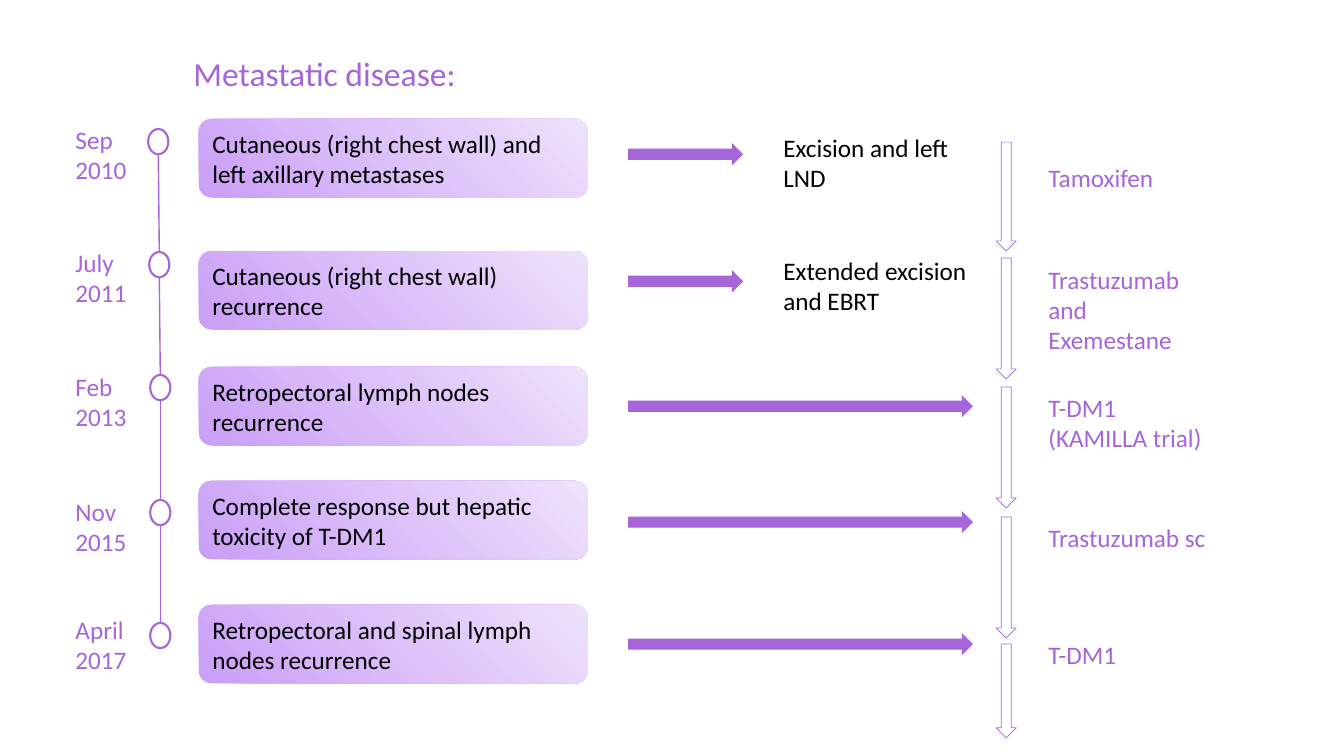
import pptx
import pptx.util
import pptx.dml.color
import pptx.enum.shapes
import pptx.enum.text
import pptx.oxml.ns
import lxml.etree

PURPLE, BLACK = "A665D8", "000000"
GRADIENT = ("CA9EF7", "EEE2FB")
TITLE = "Metastatic disease:"
SHORT, LONG = 1.14, 3.42

# date, date top, circle left, circle top
DATES = [
    ("Sep 2010", 1.18, 1.47, 1.28),
    ("July 2011", 2.4, 1.48, 2.5),
    ("Feb 2013", 3.63, 1.49, 3.72),
    ("Nov 2015", 4.87, 1.49, 4.96),
    ("April 2017", 6.04, 1.49, 6.18),
]
# event, box top, arrow top, arrow length
EVENTS = [
    ("Cutaneous (right chest wall) and left axillary metastases", 1.18, 1.42, SHORT),
    ("Cutaneous (right chest wall) recurrence", 2.49, 2.68, SHORT),
    ("Retropectoral lymph nodes recurrence", 3.64, 3.92, LONG),
    ("Complete response but hepatic toxicity of T-DM1", 4.77, 5.07, LONG),
    ("Retropectoral and spinal lymph nodes recurrence", 6, 6.28, LONG),
]
# procedure, top, width
PROCEDURES = [
    ("Excision and left LND", 1.26, 1.98),
    ("Extended excision and EBRT", 2.48, 2.19),
]
# drug, text top, text width, text height, arrow top, arrow height
DRUGS = [
    ("Tamoxifen", 1.56, 1.35, 0.4, 1.41, 1.08),
    ("Trastuzumab and Exemestane", 2.57, 1.74, 1.01, 2.56, 1.2),
    ("T-DM1 (KAMILLA trial)", 3.84, 1.74, 0.71, 3.84, 1.2),
    ("Trastuzumab sc", 5.13, 1.91, 0.4, 5.13, 1.2),
    ("T-DM1", 6.29, 1.91, 0.4, 6.39, 0.93),
]
CIRCLE_W, CIRCLE_H = 0.2, 0.25

prs = pptx.Presentation()
prs.slide_width = pptx.util.Inches(13.33)
prs.slide_height = pptx.util.Inches(7.5)
s = prs.slides.add_slide(prs.slide_layouts[6])
SHAPE = pptx.enum.shapes.MSO_SHAPE


def inches(*values):
    return [pptx.util.Inches(v) for v in values]


def rgb(color):
    return pptx.dml.color.RGBColor.from_string(color)


def write(sp, text, size=18, color=PURPLE, anchor="TOP"):
    tf = sp.text_frame
    tf.word_wrap = True
    tf.vertical_anchor = pptx.enum.text.MSO_ANCHOR[anchor]
    p = tf.paragraphs[0]
    p.alignment = pptx.enum.text.PP_ALIGN.LEFT
    r = p.add_run()
    r.text = text
    r.font.name = "Calibri"
    r.font.size = pptx.util.Pt(size)
    r.font.color.rgb = rgb(color)


def add_text(text, *box, **style):
    write(s.shapes.add_textbox(*inches(*box)), text, **style)


def add_shape(kind, *box, fill=None, line=None):
    sp = s.shapes.add_shape(kind, *inches(*box))
    sp.shadow.inherit = False
    if fill:
        sp.fill.solid()
        sp.fill.fore_color.rgb = rgb(fill)
    else:
        sp.fill.background()
    if line:
        sp.line.color.rgb = rgb(PURPLE)
        sp.line.width = pptx.util.Pt(line)
    else:
        sp.line.fill.background()
    return sp


def add_line(*ends):
    c = s.shapes.add_connector(pptx.enum.shapes.MSO_CONNECTOR.STRAIGHT, *inches(*ends))
    c.line.color.rgb = rgb(PURPLE)
    c.line.width = pptx.util.Pt(1)
    lxml.etree.SubElement(c._element.spPr, pptx.oxml.ns.qn("a:effectLst"))


add_text(TITLE, 1.82, 0.48, 4.37, 0.5, size=24)

for (_, _, x1, y1), (_, _, x2, y2) in zip(DATES, DATES[1:]):
    add_line(x1 + CIRCLE_W / 2, y1 + CIRCLE_H, x2 + CIRCLE_W / 2, y2)

for date, top, circle_x, circle_y in DATES:
    add_text(date, 0.65, top, 0.82, 0.71)
    add_shape(SHAPE.FLOWCHART_CONNECTOR, circle_x, circle_y, CIRCLE_W, CIRCLE_H, line=1.5)

for event, top, arrow_y, length in EVENTS:
    sp = add_shape(SHAPE.ROUNDED_RECTANGLE, 1.97, top, 3.86, 0.78)
    sp.fill.gradient()
    sp.fill.gradient_angle = 45
    for stop, position, color in zip(sp.fill.gradient_stops, (0, 1), GRADIENT):
        stop.position = position
        stop.color.rgb = rgb(color)
    write(sp, event, color=BLACK, anchor="MIDDLE")
    add_shape(SHAPE.RIGHT_ARROW, 6.23, arrow_y, length, 0.22, fill=PURPLE)

for procedure, top, width in PROCEDURES:
    add_text(procedure, 7.67, top, width, 0.71, color=BLACK)

for drug, top, width, height, arrow_y, arrow_h in DRUGS:
    add_shape(SHAPE.DOWN_ARROW, 9.88, arrow_y, 0.2, arrow_h, line=0.5)
    add_text(drug, 10.3, top, width, height)

prs.save("out.pptx")
